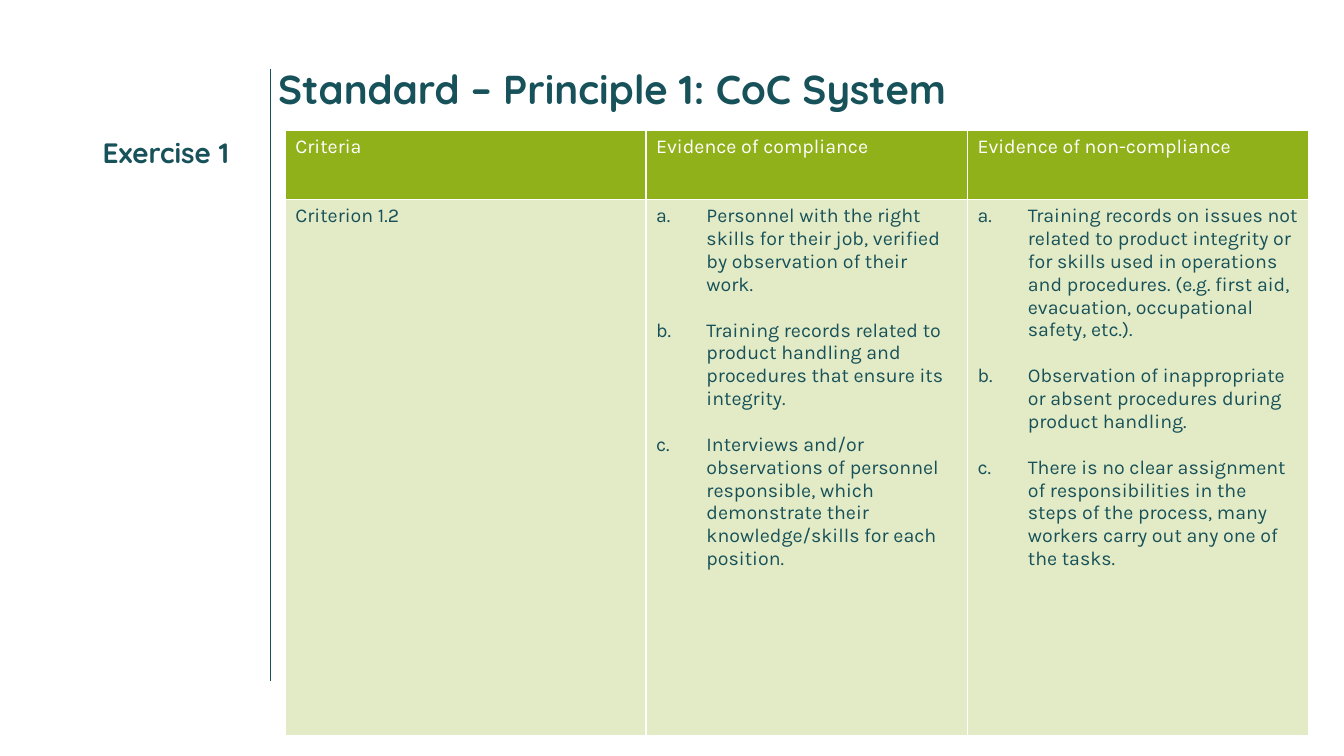
import pptx
import pptx.dml.color
import pptx.enum.shapes
import pptx.oxml
import pptx.oxml.ns
import pptx.util
from pptx.util import Cm, Pt

TEAL = pptx.dml.color.RGBColor(0x17, 0x51, 0x59)
GREEN = pptx.dml.color.RGBColor(0x91, 0xB1, 0x1B)
PALE_GREEN = pptx.dml.color.RGBColor(0xE3, 0xEB, 0xC6)
WHITE = pptx.dml.color.RGBColor(0xFF, 0xFF, 0xFF)
HEADING_FONT, BODY_FONT = "Quicksand", "Karla"

COLUMN_WIDTHS = [Cm(9.09), Cm(8.1), Cm(8.59)]
ROW_HEIGHTS = [Cm(1.75), Cm(13.51)]
HEADERS = ["Criteria", "Evidence of compliance", "Evidence of non-compliance"]
COMPLIANCE = [
    "Personnel with the right skills for their job, verified by observation of their work.",
    "Training records related to product handling and procedures that ensure its integrity.",
    "Interviews and/or observations of personnel responsible, which demonstrate their "
    "knowledge/skills for each position.",
]
NON_COMPLIANCE = [
    "Training records on issues not related to product integrity or for skills used in "
    "operations and procedures. (e.g. first aid, evacuation, occupational safety, etc.).",
    "Observation of inappropriate or absent procedures during product handling.",
    "There is no clear assignment of responsibilities in the steps of the process, "
    "many workers carry out any one of the tasks.",
]


def style(p, font, size, color, bold=False):
    for r in p.runs:
        r.font.name, r.font.size, r.font.bold = font, Pt(size), bold
        r.font.color.rgb = color


def add_heading(s, text, size, left, top, width, height):
    tf = s.shapes.add_textbox(left, top, width, height).text_frame
    tf.word_wrap = True
    tf.text = text
    style(tf.paragraphs[0], HEADING_FONT, size, TEAL, bold=True)


def add_divider(s, x, top, bottom):
    line = s.shapes.add_connector(pptx.enum.shapes.MSO_CONNECTOR.STRAIGHT, x, top, x, bottom)
    line.line.color.rgb = TEAL
    line.line.width = Pt(0.5)
    line._element.spPr.append(pptx.oxml.parse_xml(
        f"<a:effectLst {pptx.oxml.ns.nsdecls('a')}/>"))


def letter_paragraph(p):
    """Give a paragraph a hanging a., b., c. label."""
    pPr = p._p.get_or_add_pPr()
    pPr.set("marL", str(Cm(1.27)))
    pPr.set("indent", str(-Cm(1.27)))
    pPr.append(pptx.oxml.parse_xml(
        f"<a:buAutoNum {pptx.oxml.ns.nsdecls('a')} type='alphaLcPeriod'/>"))


def fill_cell(cell, items, fill, color, lettered=False):
    tcPr = cell._tc.get_or_add_tcPr()
    for side in "LRTB":
        tcPr.append(pptx.oxml.parse_xml(
            f"<a:ln{side} {pptx.oxml.ns.nsdecls('a')} w='{Pt(1)}'>"
            f"<a:solidFill><a:srgbClr val='{WHITE}'/></a:solidFill></a:ln{side}>"))
    cell.fill.solid()
    cell.fill.fore_color.rgb = fill
    cell.text_frame.text = "\n".join(items)
    for i, p in enumerate(cell.text_frame.paragraphs):
        if lettered:
            letter_paragraph(p)
        if i:
            p.space_before = Pt(16.4)
        style(p, BODY_FONT, 14, color)


def add_criteria_table(s, left, top):
    table = s.shapes.add_table(len(ROW_HEIGHTS), len(COLUMN_WIDTHS), left, top,
                               sum(COLUMN_WIDTHS), sum(ROW_HEIGHTS)).table
    for column, width in zip(table.columns, COLUMN_WIDTHS):
        column.width = width
    for row, height in zip(table.rows, ROW_HEIGHTS):
        row.height = height
    for i, header in enumerate(HEADERS):
        fill_cell(table.cell(0, i), [header], GREEN, WHITE)
    for i, items in enumerate([["Criterion 1.2"], COMPLIANCE, NON_COMPLIANCE]):
        fill_cell(table.cell(1, i), items, PALE_GREEN, TEAL, lettered=i > 0)


def add_exercise_slide(prs):
    s = prs.slides.add_slide(prs.slide_layouts[6])
    add_divider(s, Cm(6.81), Cm(1.73), Cm(17.17))
    add_heading(s, "Standard – Principle 1: CoC System", 28.8,
                Cm(6.76), Cm(1.5), Cm(25.58), Cm(1.04))
    add_heading(s, "Exercise 1", 20, Cm(2.34), Cm(3.28), Cm(4.3), Cm(1.2))
    add_criteria_table(s, Cm(7.19), Cm(3.28))


def main():
    prs = pptx.Presentation()
    prs.slide_width, prs.slide_height = Cm(33.87), Cm(19.05)
    add_exercise_slide(prs)
    prs.save("out.pptx")


if __name__ == "__main__":
    main()
